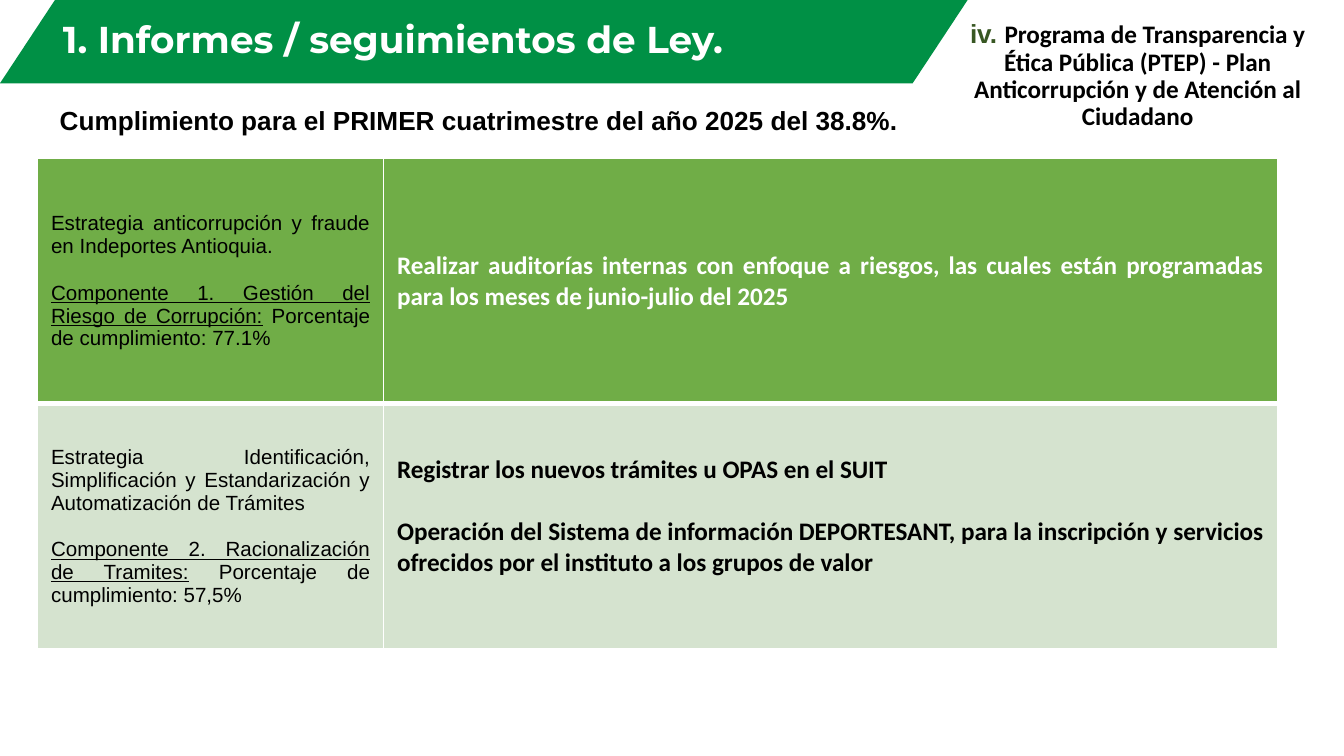
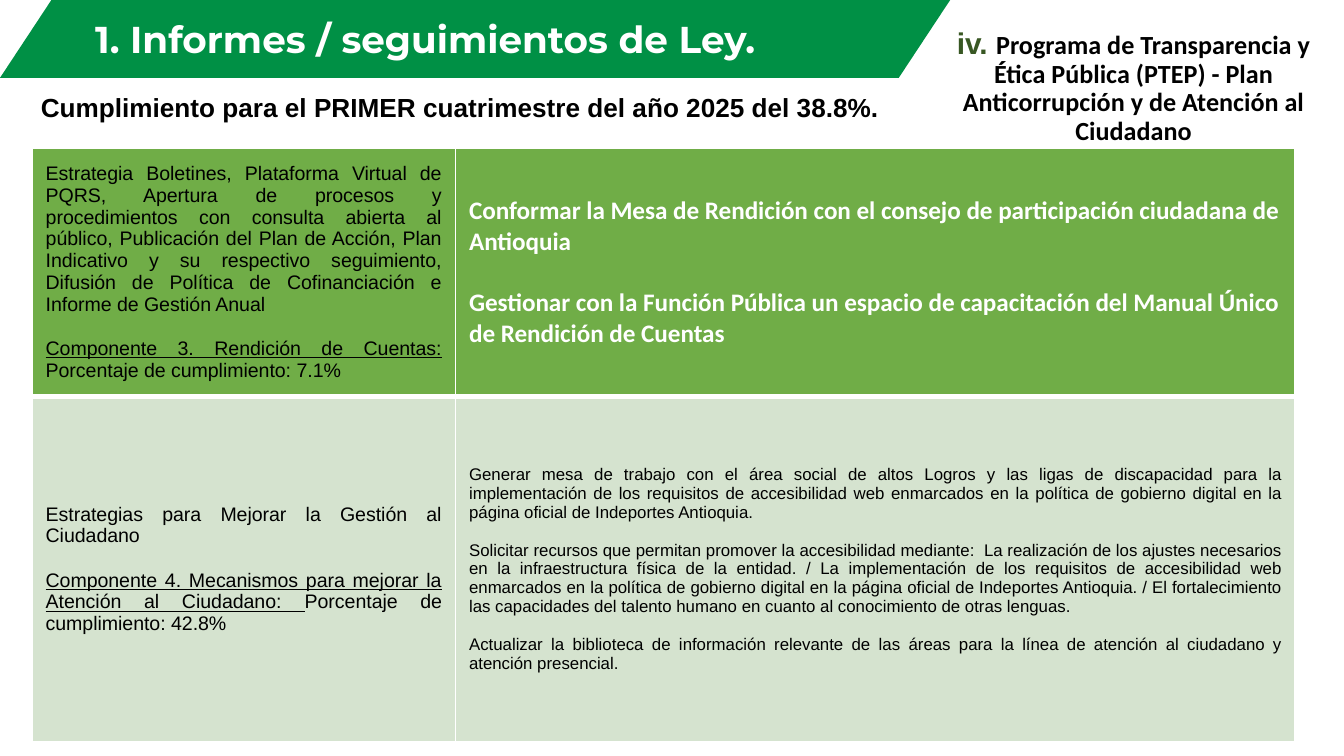
from dataclasses import dataclass

from lxml.etree import SubElement
from pptx import Presentation
from pptx.dml.color import RGBColor
from pptx.enum.shapes import MSO_SHAPE
from pptx.enum.text import MSO_ANCHOR, MSO_AUTO_SIZE, PP_ALIGN
from pptx.oxml.ns import qn
from pptx.util import Emu, Pt

PX = 4572


@dataclass(frozen=True)
class Theme:
    band: str = "009045"
    header_row: str = "70AD47"
    body_row: str = "D5E3CF"
    numeral: str = "385723"
    white: str = "FFFFFF"
    black: str = "000000"
    title_font: str = "Montserrat"
    body_font: str = "Arial"
    accent_font: str = "Calibri"
    title_size: float = 20
    subtitle_size: float = 14
    action_size: float = 13.5
    detail_size: float = 9


THEME = Theme()
TITLE = "1. Informes / seguimientos de Ley. "
SUBTITLE = "Cumplimiento para el PRIMER cuatrimestre del año 2025 del 38.8%."
PROGRAM = ("Programa de Transparencia y Ética Pública (PTEP) - Plan "
           "Anticorrupción y de Atención al Ciudadano")


def px(*lengths):
    return [Emu(length * PX) for length in lengths]


def add_span(para, text, font=THEME.body_font, size=THEME.subtitle_size,
             color=THEME.black, bold=False, underline=False):
    span = para.add_run()
    span.text = text
    span.font.name = font
    span.font.size = Pt(size)
    span.font.color.rgb = RGBColor.from_string(color)
    span.font.bold = bold
    span.font.underline = underline


def add_box(page, area, anchor=MSO_ANCHOR.TOP, spacing=None, grow=True):
    frame = page.shapes.add_textbox(*px(*area)).text_frame
    frame.word_wrap = True
    frame.vertical_anchor = anchor
    frame.auto_size = MSO_AUTO_SIZE.SHAPE_TO_FIT_TEXT if grow else MSO_AUTO_SIZE.NONE
    para = frame.paragraphs[0]
    para.alignment = PP_ALIGN.CENTER
    if spacing:
        para.line_spacing = spacing
    return para


def add_title_band(page, band_area, title_area):
    band = page.shapes.add_shape(MSO_SHAPE.PARALLELOGRAM, *px(*band_area))
    band.adjustments[0] = 0.66
    band.shadow.inherit = False
    band.fill.solid()
    band.fill.fore_color.rgb = RGBColor.from_string(THEME.band)
    band.line.fill.background()
    para = add_box(page, title_area, anchor=MSO_ANCHOR.BOTTOM, spacing=0.9, grow=False)
    add_span(para, TITLE, font=THEME.title_font, size=THEME.title_size,
             color=THEME.white, bold=True)


def add_program(page, area, numeral_size, program_size):
    para = add_box(page, area, spacing=0.9)
    add_span(para, "iv. ", size=numeral_size, color=THEME.numeral, bold=True)
    add_span(para, PROGRAM, font=THEME.accent_font, size=program_size, bold=True)


def add_subtitle(page, area):
    add_span(add_box(page, area), SUBTITLE, bold=True)


def style_cell(cell, fill, bottom_width):
    cell.vertical_anchor = MSO_ANCHOR.MIDDLE
    properties = cell._tc.get_or_add_tcPr()
    for side, width in (("L", 1), ("R", 1), ("T", 1), ("B", bottom_width)):
        border = SubElement(properties, qn(f"a:ln{side}"), w=str(Pt(width)))
        solid = SubElement(border, qn("a:solidFill"))
        SubElement(solid, qn("a:srgbClr"), val=THEME.white)
    cell.fill.solid()
    cell.fill.fore_color.rgb = RGBColor.from_string(fill)


def fill_cell(cell, paragraphs, gap, align=PP_ALIGN.JUSTIFY, bottom=10, **text_format):
    cell.margin_bottom = px(bottom)[0]
    frame = cell.text_frame
    for index, spans in enumerate(paragraphs):
        para = frame.add_paragraph() if index else frame.paragraphs[0]
        para.alignment = align
        if index:
            para.space_before = Pt(gap)
        for text, underline in spans:
            add_span(para, text, underline=underline, **text_format)


def add_strategy_table(page, left, top, columns, heights, label_size, rows):
    area = px(left, top, sum(columns), sum(heights))
    table = page.shapes.add_table(len(rows), len(columns), *area).table
    table.first_row = table.horz_banding = False
    for column, width in zip(table.columns, px(*columns)):
        column.width = width
    for index, (row, height, content) in enumerate(zip(table.rows, px(*heights), rows)):
        row.height = height
        fill = THEME.body_row if index else THEME.header_row
        for cell in row.cells:
            style_cell(cell, fill, 1 if index else 3)
        strategy, component, score, actions, action_format = content
        fill_cell(row.cells[0],
                  [[(strategy, False)], [(component, True), (score, False)]],
                  gap=label_size * 1.15, size=label_size)
        fill_cell(row.cells[1], [[(action, False)] for action in actions],
                  **action_format)


def action_format(color, **extra):
    return dict(font=THEME.accent_font, size=THEME.action_size, color=color,
                bold=True, gap=16.5, **extra)


DETAIL = dict(size=THEME.detail_size, gap=10.35)

PAGES = [
    dict(
        band=((0, 0, 1440, 124), (0, 30, 1186, 72)),
        program=((1400, 22, 586, 186), 14, 13.5),
        subtitle=(-74, 146, 1574, 68),
        table=dict(left=56, top=236, columns=(515, 1330), heights=(365, 365),
                   label_size=11, rows=[
            ("Estrategia anticorrupción y fraude en Indeportes Antioquia.",
             "Componente 1. Gestión del Riesgo de Corrupción:",
             " Porcentaje de cumplimiento: 77.1%",
             ["Realizar auditorías internas con enfoque a riesgos, las cuales están "
              "programadas para los meses de junio-julio del 2025"],
             action_format(THEME.white)),
            ("Estrategia Identificación, Simplificación y Estandarización y "
             "Automatización de Trámites",
             "Componente 2. Racionalización de Tramites:",
             " Porcentaje de cumplimiento: 57,5%",
             ["Registrar los nuevos trámites u OPAS en el SUIT",
              "Operación del Sistema de información DEPORTESANT, para la inscripción "
              "y servicios ofrecidos por el instituto a los grupos de valor"],
             action_format(THEME.black, bottom=40)),
        ]),
    ),
    dict(
        band=((0, 0, 1414, 116), (48, 24, 1186, 78)),
        program=((1394, 33, 586, 196), 16, 14),
        subtitle=(29, 126, 1312, 68),
        table=dict(left=48, top=220, columns=(630, 1249), heights=(370, 514),
                   label_size=10.5, rows=[
            ("Estrategia Boletines, Plataforma Virtual de PQRS, Apertura de procesos "
             "y procedimientos con consulta abierta al público, Publicación del Plan "
             "de Acción, Plan Indicativo y su respectivo seguimiento, Difusión de "
             "Política de Cofinanciación e Informe de Gestión Anual",
             "Componente 3. Rendición de Cuentas:",
             " Porcentaje de cumplimiento: 7.1%",
             ["Conformar la Mesa de Rendición con el consejo de participación "
              "ciudadana de Antioquia",
              "Gestionar con la Función Pública un espacio de capacitación del Manual "
              "Único de Rendición de Cuentas"],
             action_format(THEME.white, align=PP_ALIGN.LEFT)),
            ("Estrategias para Mejorar la Gestión al Ciudadano",
             "Componente 4. Mecanismos para mejorar la Atención al Ciudadano: ",
             "Porcentaje de cumplimiento: 42.8%",
             ["Generar mesa de trabajo con el área social de altos Logros y las ligas "
              "de discapacidad para la implementación de los requisitos de "
              "accesibilidad web enmarcados en la política de gobierno digital en la "
              "página oficial de Indeportes Antioquia.",
              "Solicitar recursos que permitan promover la accesibilidad mediante:  La "
              "realización de los ajustes necesarios en la infraestructura física de "
              "la entidad. / La implementación de los requisitos de accesibilidad web "
              "enmarcados en la política de gobierno digital en la página oficial de "
              "Indeportes Antioquia. / El fortalecimiento las capacidades del talento "
              "humano en cuanto al conocimiento de otras lenguas.",
              "Actualizar la biblioteca de información relevante de las áreas para la "
              "línea de atención al ciudadano y atención presencial."],
             DETAIL),
        ]),
    ),
]


def add_compliance_page(deck, content):
    page = deck.slides.add_slide(deck.slide_layouts[6])
    add_title_band(page, *content["band"])
    add_strategy_table(page, **content["table"])
    add_program(page, *content["program"])
    add_subtitle(page, content["subtitle"])


def main():
    deck = Presentation()
    deck.slide_width, deck.slide_height = px(2000, 1125)
    for content in PAGES:
        add_compliance_page(deck, content)
    deck.save("out.pptx")


if __name__ == "__main__":
    main()
